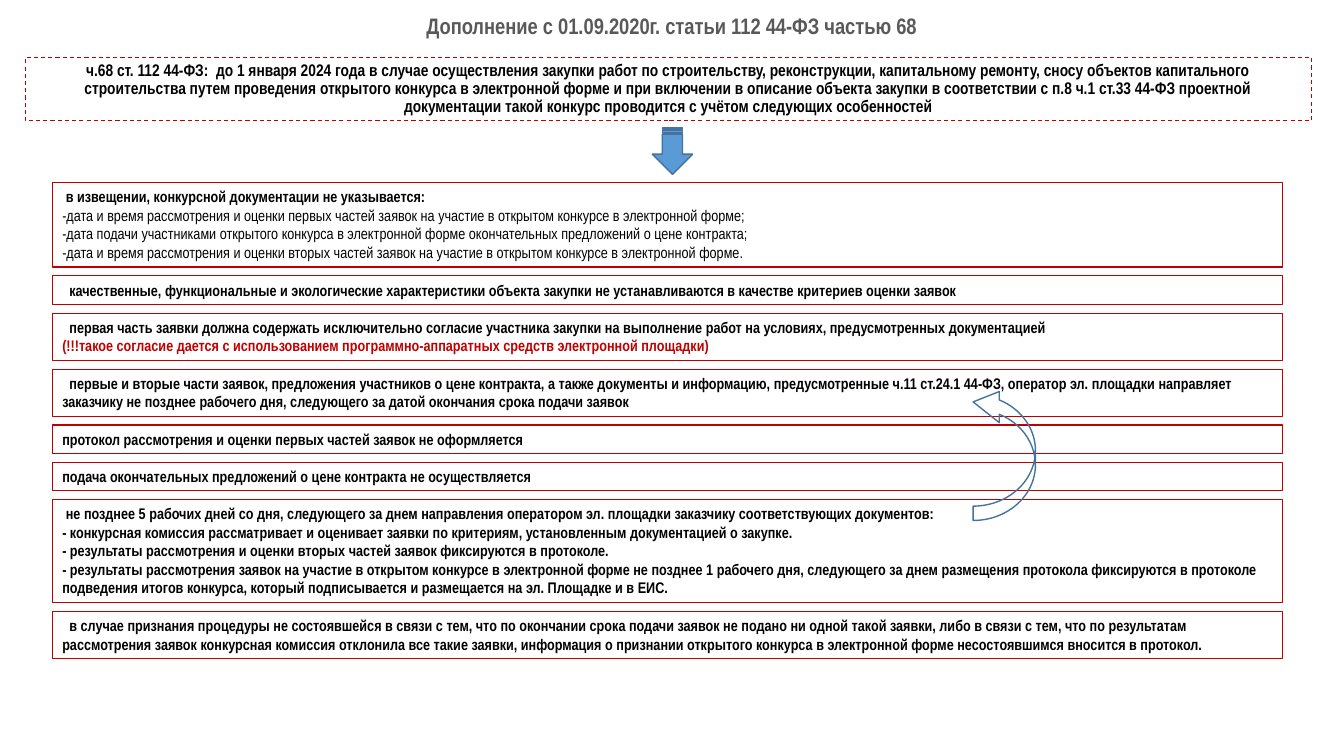
from pptx import Presentation
from pptx.dml.color import RGBColor
from pptx.enum.dml import MSO_LINE
from pptx.enum.shapes import MSO_SHAPE
from pptx.enum.text import MSO_ANCHOR, MSO_AUTO_SIZE, PP_ALIGN
from pptx.util import Cm, Pt

RECTANGLE = MSO_SHAPE.RECTANGLE
STRIPED_ARROW = MSO_SHAPE.STRIPED_RIGHT_ARROW
CURVED_ARROW = MSO_SHAPE.CURVED_UP_ARROW
DASH = MSO_LINE.DASH
CENTER, LEFT = PP_ALIGN.CENTER, PP_ALIGN.LEFT
TOP, MIDDLE, BOTTOM = MSO_ANCHOR.TOP, MSO_ANCHOR.MIDDLE, MSO_ANCHOR.BOTTOM
GROW = MSO_AUTO_SIZE.SHAPE_TO_FIT_TEXT

FONT = "Arial Narrow"
RED, BLUE, BLUE_EDGE, GREY, BLACK = "C00000", "5B9BD5", "43739E", "595959", "000000"

RULE_LEFT, RULE_TOP, RULE_WIDTH = 1.32, 4.6, 30.99
LINE_HEIGHT, RULE_PADDING, RULE_GAP = 0.47, 0.25, 0.22
SPACE_WIDTH = 0.09

TITLE = "Дополнение с 01.09.2020г. статьи 112 44-ФЗ частью 68"
STATEMENT = (
    "ч.68 ст. 112 44-ФЗ:  до 1 января 2024 года в случае осуществления закупки работ по "
    "строительству, реконструкции, капитальному ремонту, сносу объектов капитального "
    "строительства путем проведения открытого конкурса в электронной форме и при включении "
    "в описание объекта закупки в соответствии с п.8 ч.1 ст.33 44-ФЗ проектной документации "
    "такой конкурс проводится с учётом следующих особенностей"
)

PLAIN = {"bold": False}
WARNING = {"color": RED}
# Each rule: number of text lines, first-line indent in spaces, paragraphs with their format
RULES = [
    (4, 1, [
        ("в извещении, конкурсной документации не указывается:", {}),
        ("-дата и время рассмотрения и оценки первых частей заявок на участие в открытом "
         "конкурсе в электронной форме;", PLAIN),
        ("-дата подачи участниками открытого конкурса в электронной форме окончательных "
         "предложений о цене контракта;", PLAIN),
        ("-дата и время рассмотрения и оценки вторых частей заявок на участие в открытом "
         "конкурсе в электронной форме.", PLAIN),
    ]),
    (1, 2, [
        ("качественные, функциональные и экологические характеристики объекта закупки не "
         "устанавливаются в качестве критериев оценки заявок", {}),
    ]),
    (2, 2, [
        ("первая часть заявки должна содержать исключительно согласие участника закупки на "
         "выполнение работ на условиях, предусмотренных документацией", {}),
        ("(!!!такое согласие дается с использованием программно-аппаратных средств "
         "электронной площадки)", WARNING),
    ]),
    (2, 2, [
        ("первые и вторые части заявок, предложения участников о цене контракта, а также "
         "документы и информацию, предусмотренные ч.11 ст.24.1 44-ФЗ, оператор эл. площадки "
         "направляет заказчику не позднее рабочего дня, следующего за датой окончания срока "
         "подачи заявок", {}),
    ]),
    (1, 0, [("протокол рассмотрения и оценки первых частей заявок не оформляется", {})]),
    (1, 0, [("подача окончательных предложений о цене контракта не осуществляется", {})]),
    (5, 1, [
        ("не позднее 5 рабочих дней со дня, следующего за днем направления оператором эл. "
         "площадки заказчику соответствующих документов:", {}),
        ("- конкурсная комиссия рассматривает и оценивает заявки по критериям, установленным "
         "документацией о закупке.", {}),
        ("- результаты рассмотрения и оценки вторых частей заявок фиксируются в протоколе.", {}),
        ("- результаты рассмотрения заявок на участие в открытом конкурсе в электронной форме "
         "не позднее 1 рабочего дня, следующего за днем размещения протокола фиксируются в "
         "протоколе подведения итогов конкурса, который подписывается и размещается на эл. "
         "Площадке и в ЕИС.", {}),
    ]),
    (2, 2, [
        ("в случае признания процедуры не состоявшейся в связи с тем, что по окончании срока "
         "подачи заявок не подано ни одной такой заявки, либо в связи с тем, что по "
         "результатам рассмотрения заявок конкурсная комиссия отклонила все такие заявки, "
         "информация о признании открытого конкурса в электронной форме несостоявшимся "
         "вносится в протокол.", {}),
    ]),
]


def color_of(hex_string):
    return RGBColor.from_string(hex_string)


def set_attributes(target, values):
    for name, value in values.items():
        setattr(target, name, value)


def add_shape(page, kind, place, edge, weight, fill=None):
    shape = page.shapes.add_shape(kind, *map(Cm, place))
    shape.shadow.inherit = False
    if fill:
        shape.fill.solid()
        shape.fill.fore_color.rgb = color_of(fill)
    else:
        shape.fill.background()
    shape.line.color.rgb = color_of(edge)
    shape.line.width = Pt(weight)
    return shape


def set_frame(box, anchor):
    set_attributes(box.text_frame, {"word_wrap": True, "vertical_anchor": anchor})


def write_para(para, text, size, color=BLACK, bold=True, **layout):
    set_attributes(para, layout)
    span = para.add_run()
    span.text = text
    set_attributes(span.font, {"name": FONT, "size": Pt(size), "bold": bold})
    span.font.color.rgb = color_of(color)


def add_title(page):
    box = page.shapes.add_textbox(0, 0, Cm(33.86), Cm(1.12))
    set_frame(box, BOTTOM)
    write_para(box.text_frame.paragraphs[0], TITLE, 16, GREY,
               alignment=CENTER, line_spacing=0.9)


def add_statement(page):
    box = add_shape(page, RECTANGLE, (0.64, 1.45, 32.41, 1.6), RED, 0.75)
    box.line.dash_style = DASH
    set_frame(box, MIDDLE)
    write_para(box.text_frame.paragraphs[0], STATEMENT, 12,
               alignment=CENTER, line_spacing=0.9, space_before=Pt(10))


def add_rule(page, top, height, indent, paragraphs):
    box = add_shape(page, RECTANGLE, (RULE_LEFT, top, RULE_WIDTH, height), RED, 0.75)
    set_frame(box, TOP)
    frame = box.text_frame
    frame.auto_size = GROW
    for index, (text, style) in enumerate(paragraphs):
        para = frame.add_paragraph() if index else frame.paragraphs[0]
        write_para(para, text, 11, alignment=LEFT, **style)
    if indent:
        properties = frame.paragraphs[0]._p.get_or_add_pPr()
        properties.set("indent", str(Cm(indent * SPACE_WIDTH)))


def add_rules(page):
    top = RULE_TOP
    for lines, indent, paragraphs in RULES:
        height = lines * LINE_HEIGHT + RULE_PADDING
        add_rule(page, top, height, indent, paragraphs)
        top += height + RULE_GAP


def add_arrows(page):
    down = add_shape(page, STRIPED_ARROW, (16.36, 3.3, 1.17, 1.02), BLUE_EDGE, 1, BLUE)
    down.rotation = 90
    back = add_shape(page, CURVED_ARROW, (23.62, 10.64, 3.38, 1.57), BLUE_EDGE, 1)
    back.rotation = 270
    for index, value in enumerate((0.23, 0.5, 0.42)):
        back.adjustments[index] = value


def main():
    deck = Presentation()
    set_attributes(deck, {"slide_width": Cm(33.87), "slide_height": Cm(19.05)})
    page = deck.slides.add_slide(deck.slide_layouts[6])
    add_title(page)
    add_statement(page)
    add_rules(page)
    add_arrows(page)
    deck.save("out.pptx")


if __name__ == "__main__":
    main()
